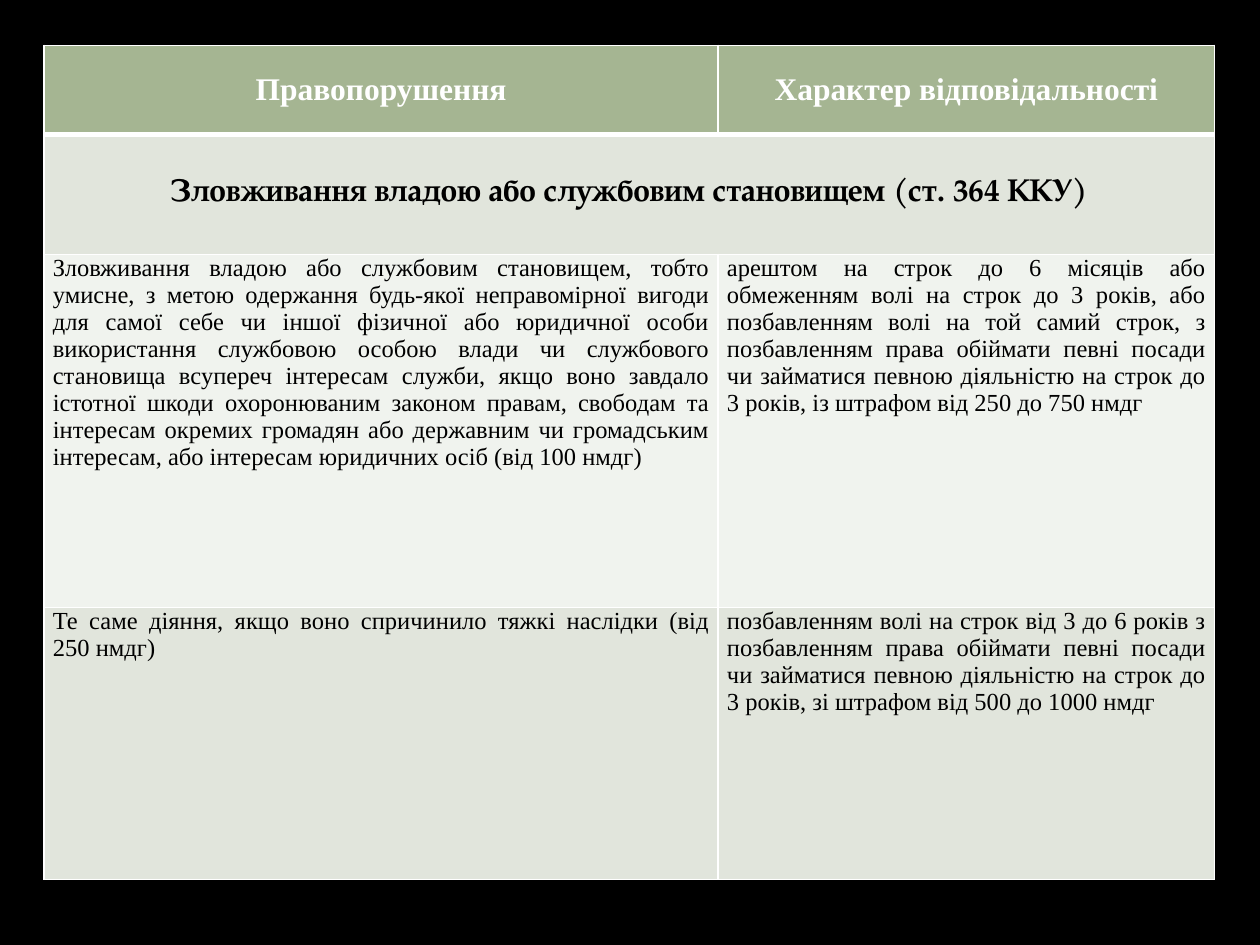
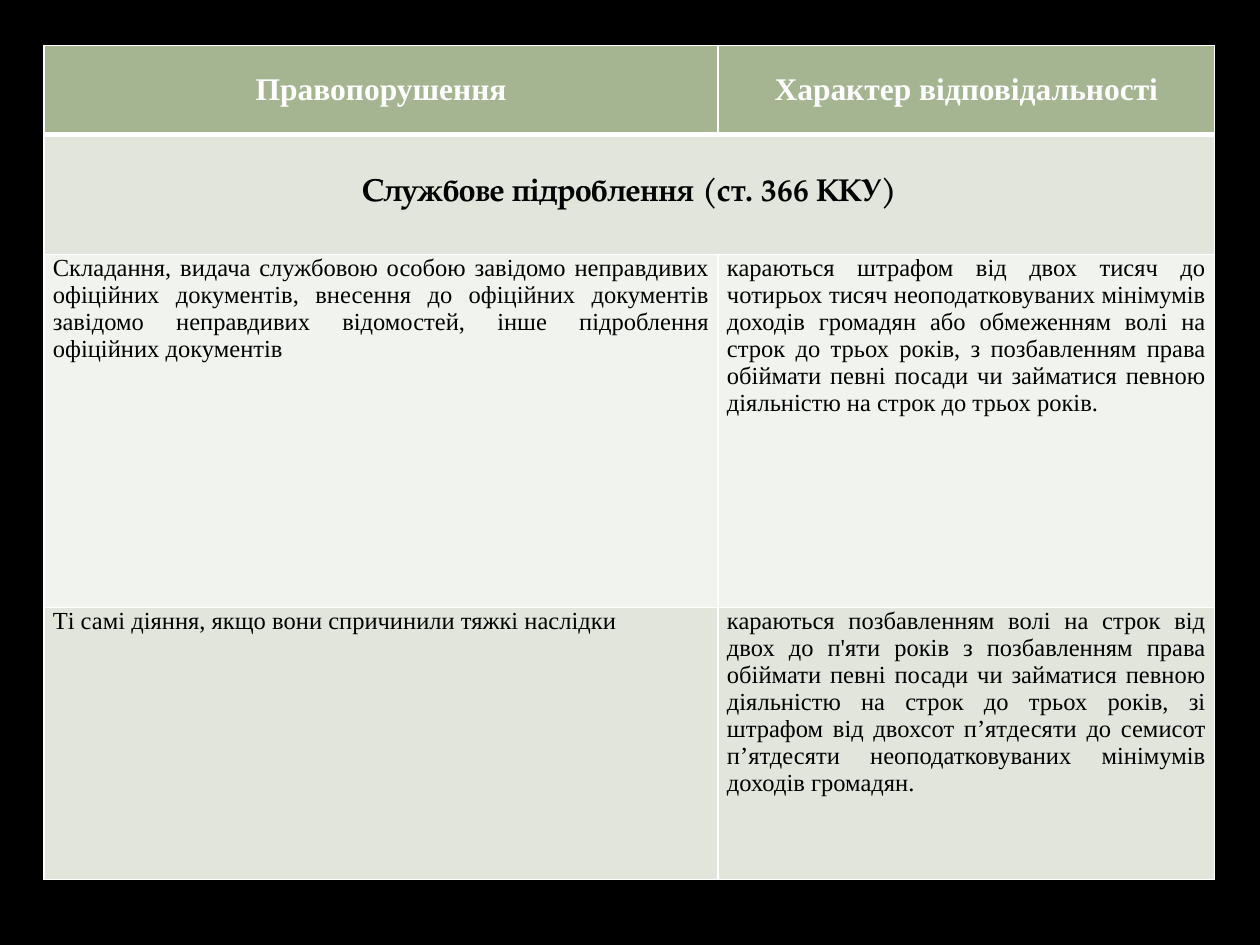
from lxml import etree
from pptx import Presentation
from pptx import util as u
from pptx.dml.color import RGBColor
from pptx.enum import text
from pptx.oxml import ns

BLACK = RGBColor(0x00, 0x00, 0x00)
WHITE = RGBColor(0xFF, 0xFF, 0xFF)
GREEN = RGBColor(0xA5, 0xB5, 0x92)
BAND = RGBColor(0xE1, 0xE5, 0xDC)
PALE = RGBColor(0xF0, 0xF3, 0xEE)
SERIF = "Times New Roman"
TITLE_FONT = "TeX Gyre Pagella"

COLS = [5.35, 3.94]
ROWS = [0.71, 0.95, 2.8, 2.16]
FILLS = [GREEN, BAND, PALE, BAND]
HEADER = ["Правопорушення", "Характер відповідальності"]

OFFENCES = [
    ("Зловживання владою або службовим становищем (ст. 364 ККУ)", [
        ["Зловживання владою або службовим становищем, тобто умисне, з метою одержання "
         "будь-якої неправомірної вигоди для самої себе чи іншої фізичної або юридичної "
         "особи використання службовою особою влади чи службового становища всупереч "
         "інтересам служби, якщо воно завдало істотної шкоди охоронюваним законом правам, "
         "свободам та інтересам окремих громадян або державним чи громадським інтересам, "
         "або інтересам юридичних осіб (від 100 нмдг)",
         "арештом на строк до 6 місяців або обмеженням волі на строк до 3 років, або "
         "позбавленням волі на той самий строк, з позбавленням права обіймати певні посади "
         "чи займатися певною діяльністю на строк до 3 років, із штрафом від 250 до 750 нмдг"],
        ["Те саме діяння, якщо воно спричинило тяжкі наслідки (від 250 нмдг)",
         "позбавленням волі на строк від 3 до 6 років з позбавленням права обіймати певні "
         "посади чи займатися певною діяльністю на строк до 3 років, зі штрафом від 500 "
         "до 1000 нмдг"],
    ]),
    ("Службове підроблення (ст. 366 ККУ)", [
        ["Складання, видача службовою особою завідомо неправдивих офіційних документів, "
         "внесення до офіційних документів завідомо неправдивих відомостей, інше "
         "підроблення офіційних документів",
         "караються штрафом від двох тисяч до чотирьох тисяч неоподатковуваних мінімумів "
         "доходів громадян або обмеженням волі на строк до трьох років, з позбавленням "
         "права обіймати певні посади чи займатися певною діяльністю на строк до трьох років."],
        ["Ті самі діяння, якщо вони спричинили тяжкі наслідки",
         "караються позбавленням волі на строк від двох до п'яти років з позбавленням права "
         "обіймати певні посади чи займатися певною діяльністю на строк до трьох років, зі "
         "штрафом від двохсот п’ятдесяти до семисот п’ятдесяти неоподатковуваних мінімумів "
         "доходів громадян."],
    ]),
]


def write(cell, content, size=14, font=SERIF, color=BLACK, bold=False,
          align=text.PP_ALIGN.JUSTIFY, anchor=text.MSO_ANCHOR.TOP, side=0.07, edge=0):
    cell.margin_left = cell.margin_right = u.Inches(side)
    cell.margin_top = cell.margin_bottom = u.Inches(edge)
    cell.vertical_anchor = anchor
    p = cell.text_frame.paragraphs[0]
    p.alignment = align
    r = p.add_run()
    r.text = content
    r.font.size = u.Pt(size)
    r.font.name = font
    r.font.bold = bold
    r.font.color.rgb = color


def style_cell(cell, fill, top=1, bottom=1):
    tcPr = cell._tc.get_or_add_tcPr()
    for side, width in (("L", 1), ("R", 1), ("T", top), ("B", bottom)):
        ln = etree.SubElement(tcPr, ns.qn(f"a:ln{side}"), w=str(u.Pt(width)))
        solid = etree.SubElement(ln, ns.qn("a:solidFill"))
        etree.SubElement(solid, ns.qn("a:srgbClr"), val=str(WHITE))
    cell.fill.solid()
    cell.fill.fore_color.rgb = fill


prs = Presentation()
prs.slide_width = u.Inches(10)
prs.slide_height = u.Inches(7.5)
heading = dict(size=18, bold=True, align=text.PP_ALIGN.CENTER, anchor=text.MSO_ANCHOR.MIDDLE)

for title, body in OFFENCES:
    s = prs.slides.add_slide(prs.slide_layouts[6])
    s.background.fill.solid()
    s.background.fill.fore_color.rgb = BLACK

    table = s.shapes.add_table(len(ROWS), len(COLS), u.Inches(0.35), u.Inches(0.36),
                               u.Inches(sum(COLS)), u.Inches(sum(ROWS))).table
    for col, width in zip(table.columns, COLS):
        col.width = u.Inches(width)
    for i, (row, height) in enumerate(zip(table.rows, ROWS)):
        row.height = u.Inches(height)
        for cell in row.cells:
            style_cell(cell, FILLS[i], top=3 if i == 1 else 1, bottom=3 if i == 0 else 1)

    for j, label in enumerate(HEADER):
        write(table.cell(0, j), label, color=WHITE, **heading)
    table.cell(1, 0).merge(table.cell(1, 1))
    write(table.cell(1, 0), title, font=TITLE_FONT, side=0.1, edge=0.05, **heading)
    for i, pair in enumerate(body, start=2):
        for j, content in enumerate(pair):
            write(table.cell(i, j), content)

prs.save("out.pptx")
